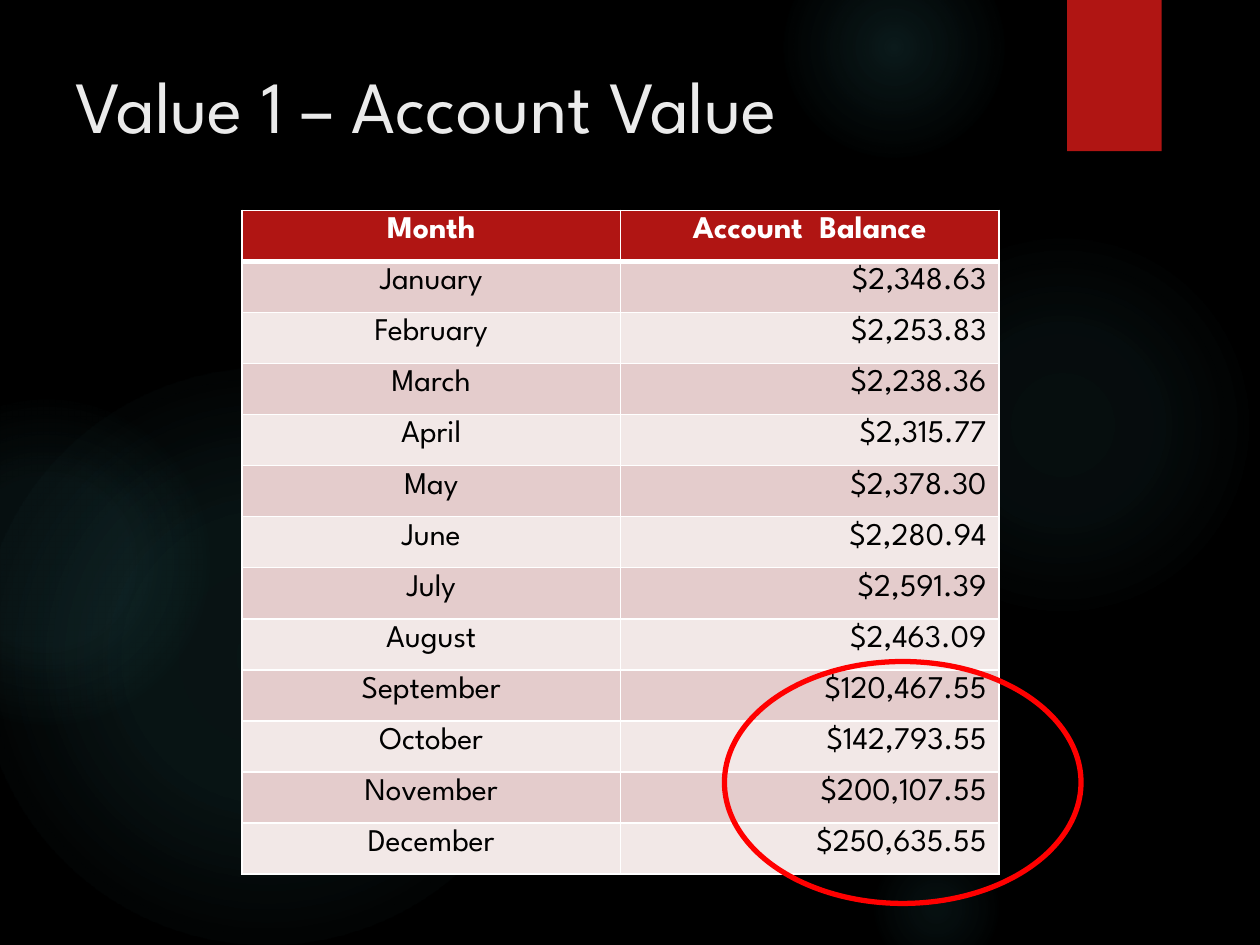
import lxml.etree
import pptx
import pptx.dml.color
import pptx.enum.shapes
import pptx.enum.text
import pptx.oxml
import pptx.oxml.ns
import pptx.util

Inches = pptx.util.Inches
SHAPE = pptx.enum.shapes.MSO_SHAPE
ALIGN = pptx.enum.text.PP_ALIGN
ANCHOR = pptx.enum.text.MSO_ANCHOR

# Content
TITLE = "Value 1 – Account Value"
HEADER = ("Month", "Account  Balance")
BALANCES = [
    ("January", "$2,348.63"),
    ("February", "$2,253.83"),
    ("March", "$2,238.36"),
    ("April", "$2,315.77"),
    ("May", "$2,378.30"),
    ("June", "$2,280.94"),
    ("July", "$2,591.39"),
    ("August", "$2,463.09"),
    ("September", "$120,467.55"),
    ("October", "$142,793.55"),
    ("November", "$200,107.55"),
    ("December", "$250,635.55"),
]

# Style
FONT = "League Spartan"
COLORS = {
    "background": "000000", "glow": "50B9C1", "accent": "B01513",
    "title": "EBEBEB", "white": "FFFFFF", "text": "000000",
    "odd_row": "E4CCCC", "even_row": "F2E8E7", "highlight": "FF0000",
}
# Glows: left, top, diameter, then (position %, opacity %) stops
GLOWS = [
    (6.89, 1.83, 3.08, [(0, 7), (36, 6), (69, 0)]),
    (6.22, -0.5, 1.75, [(0, 14), (36, 7), (73, 0)]),
    (6.89, 6.67, 1.08, [(0, 9), (36, 5), (66, 0)]),
    (-0.17, 2.92, 4.58, [(0, 11), (36, 10), (75, 0)]),
    (-0.92, 3.17, 2.58, [(0, 8), (36, 8), (72, 0)]),
]
TABLE_BOX = (1.92, 1.67, 6.01, 5.27)


def rgb(name):
    return pptx.dml.color.RGBColor.from_string(COLORS[name])


def drawing_xml(tag, content, attributes=""):
    namespace = pptx.oxml.ns.nsdecls("a")
    return pptx.oxml.parse_xml(f"<a:{tag} {namespace} {attributes}>{content}</a:{tag}>")


def color_xml(name, opacity):
    return f'<a:srgbClr val="{COLORS[name]}"><a:alpha val="{opacity * 1000}"/></a:srgbClr>'


def add_shape(slide, kind, box):
    shape = slide.shapes.add_shape(kind, *map(Inches, box))
    shape.shadow.inherit = False
    shape.line.fill.background()
    return shape


def add_glow(slide, left, top, diameter, stops):
    shape = add_shape(slide, SHAPE.OVAL, (left, top, diameter, diameter))
    stops_xml = "".join(
        f'<a:gs pos="{position * 1000}">{color_xml("glow", opacity)}</a:gs>'
        for position, opacity in stops)
    center = '<a:fillToRect l="50000" t="50000" r="50000" b="50000"/>'
    gradient = drawing_xml(
        "gradFill", f'<a:gsLst>{stops_xml}</a:gsLst><a:path path="circle">{center}</a:path>')
    shape.element.spPr.find(pptx.oxml.ns.qn("a:prstGeom")).addnext(gradient)


def format_runs(paragraph, size, color, bold=False):
    for run in paragraph.runs:
        run.font.name = FONT
        run.font.size = pptx.util.Pt(size)
        run.font.bold = bold
        run.font.color.rgb = rgb(color)


def set_borders(cell, widths):
    fill = f'<a:solidFill><a:srgbClr val="{COLORS["white"]}"/></a:solidFill>'
    properties = cell._tc.get_or_add_tcPr()
    for side, width in zip("LRTB", widths):
        properties.append(drawing_xml(f"ln{side}", fill, f'w="{pptx.util.Pt(width)}"'))


def add_balance_table(slide):
    rows = [HEADER] + BALANCES
    left, top, width, height = map(Inches, TABLE_BOX)
    table = slide.shapes.add_table(len(rows), len(HEADER), left, top, width, height).table
    for row_index, row in enumerate(rows):
        is_header = row_index == 0
        row_color = "accent" if is_header else ("even_row", "odd_row")[row_index % 2]
        borders = (1, 1, 3 if row_index == 1 else 1, 3 if is_header else 1)
        for column_index, text in enumerate(row):
            cell = table.cell(row_index, column_index)
            cell.text_frame.text = text
            paragraph = cell.text_frame.paragraphs[0]
            is_amount = column_index == 1 and not is_header
            paragraph.alignment = ALIGN.RIGHT if is_amount else ALIGN.CENTER
            format_runs(paragraph, 18, "white" if is_header else "text", is_header)
            set_borders(cell, borders)
            cell.fill.solid()
            cell.fill.fore_color.rgb = rgb(row_color)


def main():
    presentation = pptx.Presentation()
    presentation.slide_width, presentation.slide_height = Inches(10), Inches(7.5)
    slide = presentation.slides.add_slide(presentation.slide_layouts[5])
    slide.background.fill.solid()
    slide.background.fill.fore_color.rgb = rgb("background")

    # Backdrop glows and the accent tab
    for glow in GLOWS:
        add_glow(slide, *glow)
    tab = add_shape(slide, SHAPE.RECTANGLE, (8.47, 0, 0.75, 1.2))
    tab.fill.solid()
    tab.fill.fore_color.rgb = rgb("accent")
    shadow = drawing_xml(
        "outerShdw", color_xml("text", 45),
        f'blurRad="{pptx.util.Pt(3)}" dist="{pptx.util.Pt(2)}" dir="5400000" rotWithShape="0"')
    tab.element.spPr.find(pptx.oxml.ns.qn("a:effectLst")).append(shadow)

    # Title, brought in front of the backdrop
    title = slide.shapes.title
    slide.shapes._spTree.append(title.element)
    title.left, title.top, title.width, title.height = map(Inches, (0.5, 0.25, 9, 1.25))
    frame = title.text_frame
    frame.text = TITLE
    frame.auto_size = pptx.enum.text.MSO_AUTO_SIZE.NONE
    frame.vertical_anchor = ANCHOR.TOP
    frame.margin_top = Inches(0.23)
    frame.paragraphs[0].alignment = ALIGN.LEFT
    format_runs(frame.paragraphs[0], 42, "title")

    # Table and the ring around the last four balances
    add_balance_table(slide)
    ring = add_shape(slide, SHAPE.OVAL, (5.75, 5.25, 2.83, 1.92))
    ring.fill.background()
    ring.line.color.rgb = rgb("highlight")
    ring.line.width = pptx.util.Pt(3)

    presentation.save("out.pptx")


if __name__ == "__main__":
    main()
